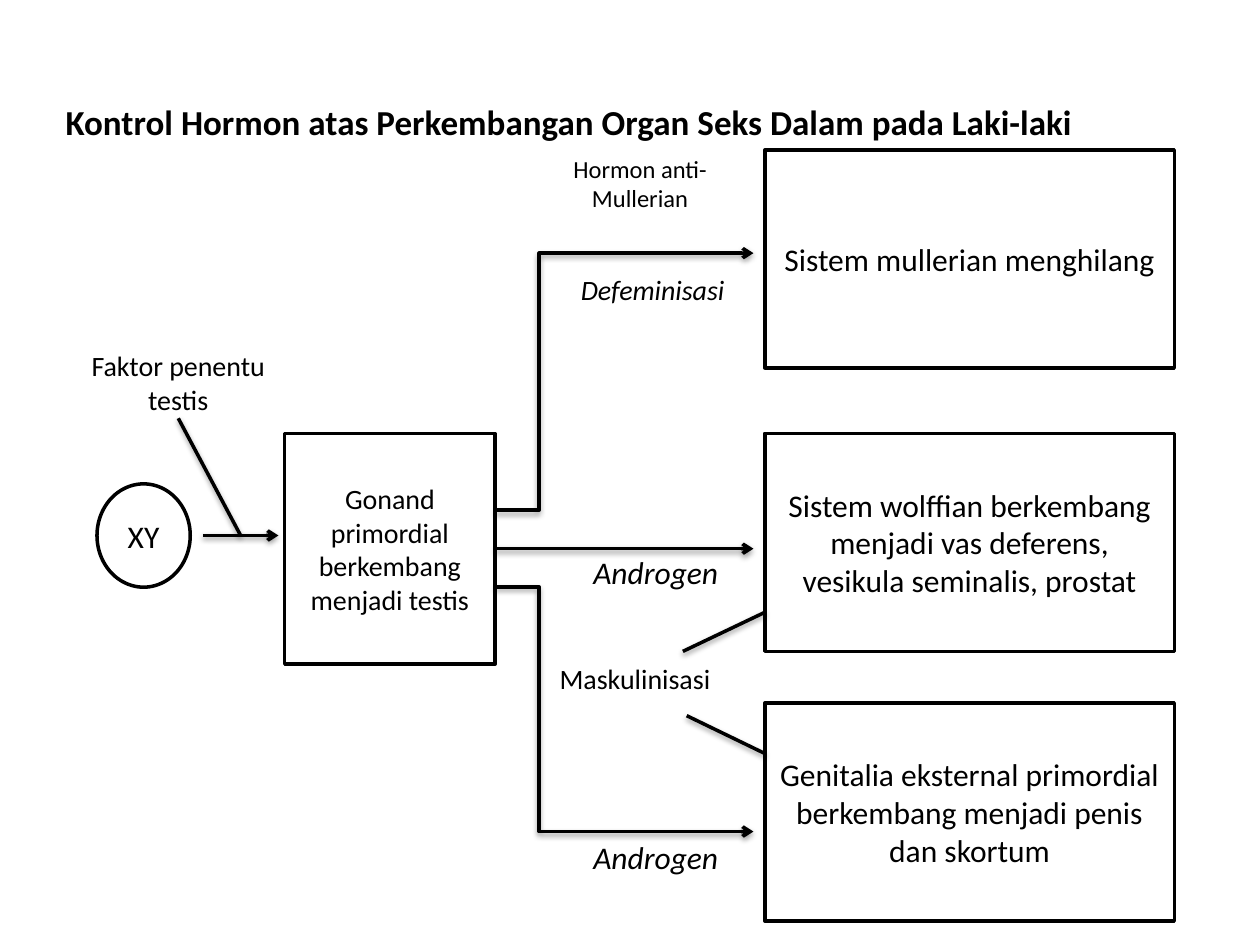
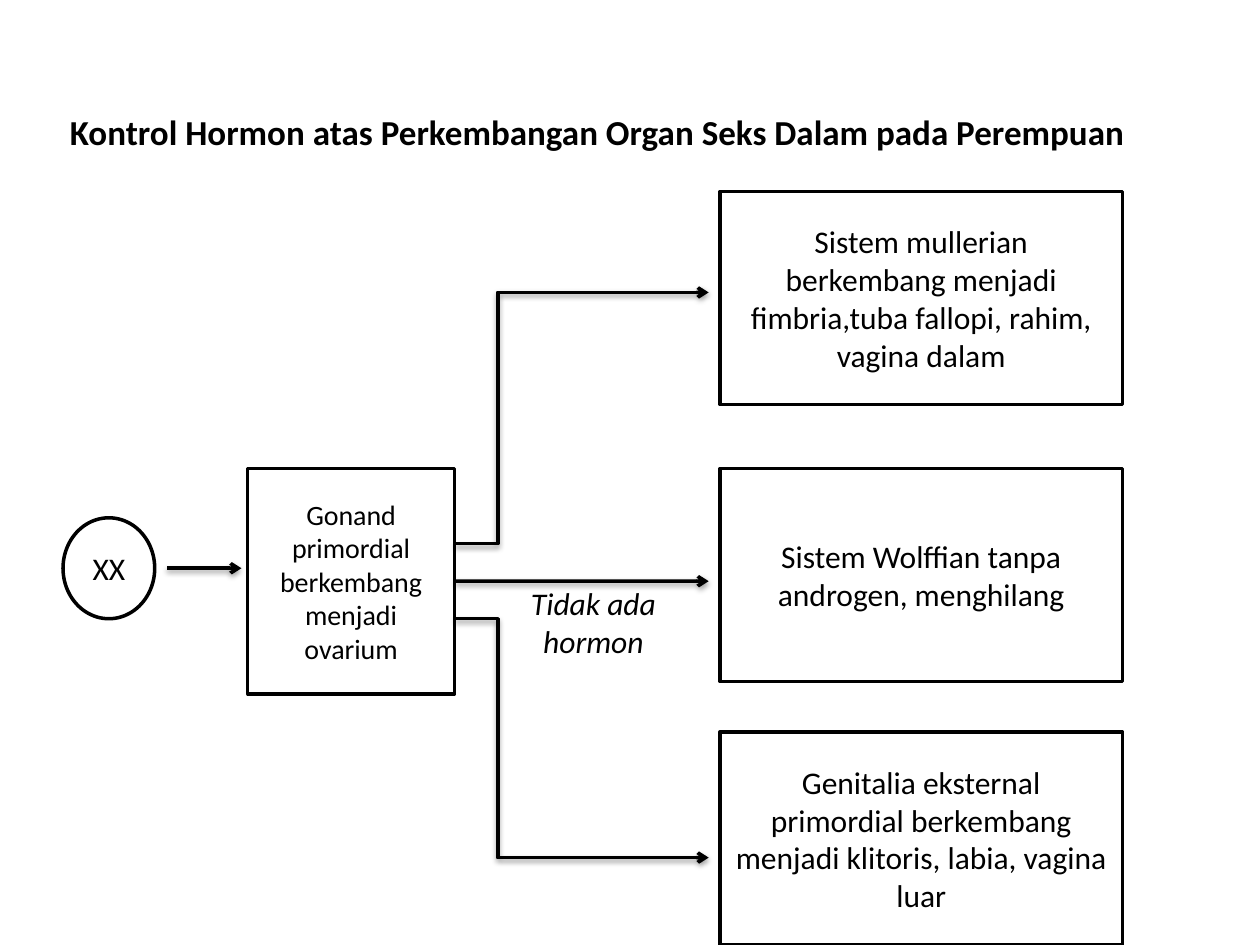
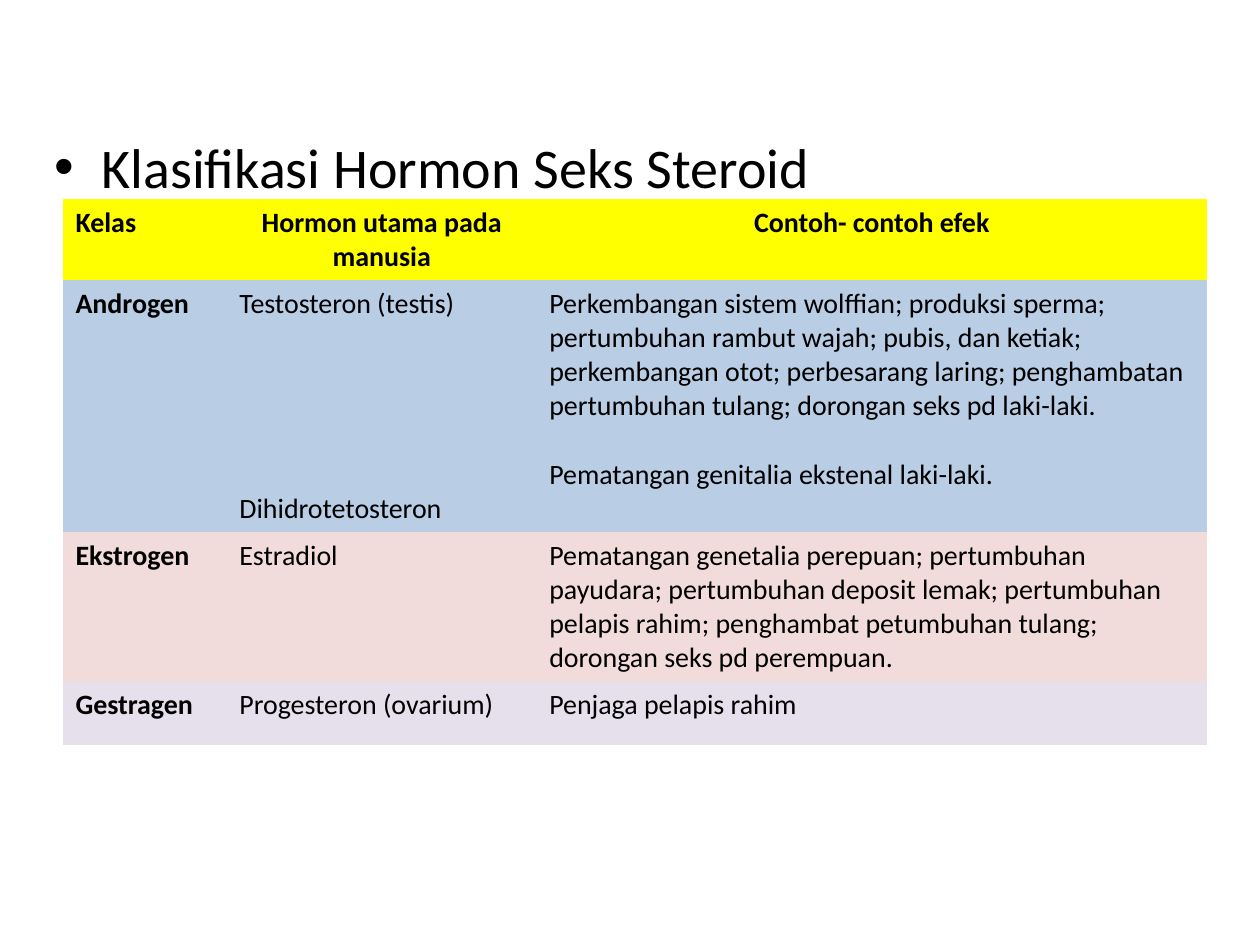
"""Build three slides on hormones and the development of sex organs."""
from dataclasses import dataclass

from lxml import etree
from pptx import Presentation
from pptx import util as u
from pptx.dml.color import RGBColor
from pptx.enum import shapes, text
from pptx.oxml.ns import qn

PX = 9144


@dataclass(frozen=True)
class Theme:
    """Colours, type sizes and line weight of the deck."""
    font: str = "Calibri"
    ink: str = "000000"
    paper: str = "FFFFFF"
    head: str = "FFFF00"
    rows: tuple = ("B9CDE5", "F2DCDB", "E6E0EC")
    small: int = 14
    normal: int = 16
    large: int = 18
    title: int = 20
    bullet: int = 32
    line: int = 2


THEME = Theme()
CENTER, LEFT = text.PP_ALIGN.CENTER, text.PP_ALIGN.LEFT

FRAME = (77, 119, 855, 612)
CHROMOSOME, GONAD = (77, 384, 74, 82), (226, 344, 167, 183)
OUTCOME_LEFT, OUTCOME_WIDTH, OUTCOME_HEIGHT = 607, 325, 173
OUTCOME_TOPS = (119, 344, 558)
GONAD_RIGHT, GONAD_MIDDLE = GONAD[0] + GONAD[2], GONAD[1] + GONAD[3] / 2
ARROW_END = 598
INPUT_ARROW = (161, 425, 221, 425)
MIDDLE_ARROW = (GONAD_RIGHT, GONAD_MIDDLE, ARROW_END, GONAD_MIDDLE)
ELBOWS = ((GONAD_RIGHT, 405, ARROW_END, 201), (GONAD_RIGHT, 466, ARROW_END, 660))
ELBOW_BEND = 17000

DIAGRAMS = [
    {
        "title": "Kontrol Hormon atas Perkembangan Organ Seks Dalam pada Laki-laki",
        "title_at": (42, 75, 858, 44), "title_align": LEFT,
        "frame": FRAME,
        "chromosome": "XY",
        "gonad": "Gonand primordial berkembang menjadi testis",
        "outcomes": [
            "Sistem mullerian menghilang",
            "Sistem wolffian berkembang menjadi vas deferens, vesikula seminalis, prostat",
            "Genitalia eksternal primordial berkembang menjadi penis dan skortum",
        ],
        "labels": [
            ("Hormon anti- Mullerian", (412, 117, 192, 74), THEME.small, False),
            ("Defeminisasi", (438, 211, 160, 48), THEME.normal, True),
            ("Androgen", (449, 434, 143, 52), THEME.large, True),
            ("Maskulinisasi", (421, 520, 166, 48), THEME.normal, False),
            ("Androgen", (449, 660, 143, 52), THEME.large, True),
        ],
        "factor": ("Faktor penentu testis", (58, 272, 167, 60), (191, 425)),
        "pointers": [(542, 517, 607, 486), (545, 568, 607, 598)],
    },
    {
        "title": "Kontrol Hormon atas Perkembangan Organ Seks Dalam pada Perempuan",
        "title_at": (42, 83, 864, 44), "title_align": CENTER,
        "frame": (50, 152, 841, 598),
        "chromosome": "XX",
        "gonad": "Gonand primordial berkembang menjadi ovarium",
        "outcomes": [
            "Sistem mullerian berkembang menjadi fimbria,tuba fallopi, rahim, vagina dalam",
            "Sistem Wolffian tanpa androgen, menghilang",
            "Genitalia eksternal primordial berkembang menjadi klitoris, labia, vagina luar",
        ],
        "labels": [("Tidak ada hormon", (412, 433, 186, 67), THEME.large, True)],
        "factor": None,
        "pointers": [],
    },
]

CLASSES_TITLE = "Klasifikasi Hormon Seks Steroid"
CLASSES_AT, TABLE_AT = (33, 100, 967, 582), (50, 158)
COLUMNS, ROWS = (130, 246, 532), (50, 155, 113, 50)
CLASSES = [
    (["Kelas"], ["Hormon utama pada manusia"], ["Contoh- contoh efek"]),
    (["Androgen"],
     ["Testosteron (testis)", "Dihidrotetosteron"],
     ["Perkembangan sistem wolffian; produksi sperma; pertumbuhan rambut wajah; "
      "pubis, dan ketiak; perkembangan otot; perbesarang laring; penghambatan "
      "pertumbuhan tulang; dorongan seks pd laki-laki.",
      "Pematangan genitalia ekstenal laki-laki."]),
    (["Ekstrogen"], ["Estradiol"],
     ["Pematangan genetalia perepuan; pertumbuhan payudara; pertumbuhan deposit "
      "lemak; pertumbuhan pelapis rahim; penghambat petumbuhan tulang; dorongan "
      "seks pd perempuan."]),
    (["Gestragen"], ["Progesteron (ovarium)"], ["Penjaga pelapis rahim"]),
]
GAPS = (0, 97.7, 19.5)
PLAIN_TABLE = "{2D5ABB26-0587-4C30-8999-92F81FD0307C}"


def rgb(colour):
    """Turn a hex string into a colour."""
    return RGBColor.from_string(colour)


def emu(lengths):
    """Turn px lengths into EMU."""
    return [u.Emu(round(length * PX)) for length in lengths]


def write(frame, lines, size=THEME.normal, bold=False, italic=False, align=CENTER,
          gap=0, anchor=None):
    """Fill a text frame with formatted paragraphs."""
    frame.word_wrap = True
    if anchor is not None:
        frame.vertical_anchor = anchor
    for index, line in enumerate(lines):
        para = frame.add_paragraph() if index else frame.paragraphs[0]
        para.alignment = align
        para.space_before = u.Pt(gap if index else 0)
        span = para.add_run()
        span.text = line
        font = span.font
        font.name, font.size, font.bold, font.italic = THEME.font, u.Pt(size), bold, italic
        font.color.rgb = rgb(THEME.ink)


def place(holder, at):
    """Move a placeholder to a px rectangle."""
    holder.left, holder.top, holder.width, holder.height = emu(at)
    holder.text_frame.auto_size = text.MSO_AUTO_SIZE.NONE


def add_shadow(line):
    """Give a connector a soft shadow below it."""
    effects = etree.SubElement(line._element.spPr, qn("a:effectLst"))
    shadow = etree.SubElement(effects, qn("a:outerShdw"), blurRad="40000", dist="20000",
                              dir="5400000", rotWithShape="0")
    colour = etree.SubElement(shadow, qn("a:srgbClr"), val=THEME.ink)
    etree.SubElement(colour, qn("a:alpha"), val="38000")


class Diagram:
    """Draws on a page, fitting the shared layout into a frame."""

    def __init__(self, page, frame):
        """Keep the page and the frame to fit."""
        self.page, self.frame = page, frame

    def fit(self, points):
        """Map x, y pairs from the shared layout to EMU."""
        return emu(self.frame[i % 2] + (value - FRAME[i % 2])
                   * self.frame[2 + i % 2] / FRAME[2 + i % 2]
                   for i, value in enumerate(points))

    def fit_box(self, at):
        """Map a rectangle from the shared layout to EMU."""
        left, top, width, height = at
        x1, y1, x2, y2 = self.fit((left, top, left + width, top + height))
        return x1, y1, x2 - x1, y2 - y1

    def node(self, kind, words, at, size):
        """Add an outlined shape with centred text."""
        box = self.page.shapes.add_shape(kind, *self.fit_box(at))
        box.shadow.inherit = False
        box.fill.solid()
        box.fill.fore_color.rgb = rgb(THEME.paper)
        box.line.color.rgb = rgb(THEME.ink)
        box.line.width = u.Pt(THEME.line)
        write(box.text_frame, [words], size=size, anchor=text.MSO_ANCHOR.MIDDLE)
        return box

    def label(self, words, at, size, italic=False):
        """Add a centred text box."""
        box = self.page.shapes.add_textbox(*self.fit_box(at))
        write(box.text_frame, [words], size=size, italic=italic)
        return box

    def line(self, ends, arrow=False, bent=False, start=None):
        """Add a connector, joined to a (box, side) start if given."""
        kind = shapes.MSO_CONNECTOR.ELBOW if bent else shapes.MSO_CONNECTOR.STRAIGHT
        line = self.page.shapes.add_connector(kind, *self.fit(ends))
        if start:
            line.begin_connect(*start)
        line.line.color.rgb = rgb(THEME.ink)
        line.line.width = u.Pt(THEME.line)
        if arrow:
            etree.SubElement(line.line._get_or_add_ln(), qn("a:tailEnd"), type="arrow")
        if bent:
            guides = line._element.spPr.find(qn("a:prstGeom")).find(qn("a:avLst"))
            etree.SubElement(guides, qn("a:gd"), name="adj1", fmla=f"val {ELBOW_BEND}")
        add_shadow(line)


def build_diagram(deck, content):
    """Add a slide showing how a gonad leads to three outcomes."""
    page = deck.slides.add_slide(deck.slide_layouts[5])
    place(page.shapes.title, content["title_at"])
    write(page.shapes.title.text_frame, [content["title"]], size=THEME.title, bold=True,
          align=content["title_align"], anchor=text.MSO_ANCHOR.TOP)
    diagram = Diagram(page, content["frame"])
    rectangle = shapes.MSO_SHAPE.RECTANGLE
    diagram.node(shapes.MSO_SHAPE.OVAL, content["chromosome"], CHROMOSOME, THEME.large)
    gonad = diagram.node(rectangle, content["gonad"], GONAD, THEME.normal)
    for words, top in zip(content["outcomes"], OUTCOME_TOPS):
        at = (OUTCOME_LEFT, top, OUTCOME_WIDTH, OUTCOME_HEIGHT)
        diagram.node(rectangle, words, at, THEME.large)
    diagram.line(INPUT_ARROW, arrow=True)
    diagram.line(MIDDLE_ARROW, arrow=True, start=(gonad, 3))
    for ends in ELBOWS:
        diagram.line(ends, arrow=True, bent=True)
    for label in content["labels"]:
        diagram.label(*label)
    for ends in content["pointers"]:
        diagram.line(ends)
    if content["factor"]:
        words, at, target = content["factor"]
        factor = diagram.label(words, at, THEME.normal)
        bottom_middle = (at[0] + at[2] / 2, at[1] + at[3])
        diagram.line((*bottom_middle, *target), start=(factor, 2))


def build_classes(deck):
    """Add the slide with the table of hormone classes."""
    page = deck.slides.add_slide(deck.slide_layouts[1])
    title = page.shapes.title._element
    title.getparent().remove(title)
    body = page.placeholders[1]
    place(body, CLASSES_AT)
    write(body.text_frame, [CLASSES_TITLE], size=THEME.bullet, align=LEFT)
    at = emu((*TABLE_AT, sum(COLUMNS), sum(ROWS)))
    table = page.shapes.add_table(len(ROWS), len(COLUMNS), *at).table
    table.first_row = table.horz_banding = False
    table._tbl.tblPr.find(qn("a:tableStyleId")).text = PLAIN_TABLE
    for column, width in zip(table.columns, emu(COLUMNS)):
        column.width = width
    for row, height in zip(table.rows, emu(ROWS)):
        row.height = height
    for r, (cells, fill) in enumerate(zip(CLASSES, (THEME.head, *THEME.rows))):
        for c, lines in enumerate(cells):
            cell = table.cell(r, c)
            cell.fill.solid()
            cell.fill.fore_color.rgb = rgb(fill)
            write(cell.text_frame, lines, bold=r == 0 or c == 0, gap=GAPS[c],
                  align=CENTER if r == 0 and c else LEFT)


def main():
    """Build and save the deck."""
    deck = Presentation()
    deck.slide_width, deck.slide_height = emu((1000, 750))
    for content in DIAGRAMS:
        build_diagram(deck, content)
    build_classes(deck)
    deck.save("out.pptx")


if __name__ == "__main__":
    main()
